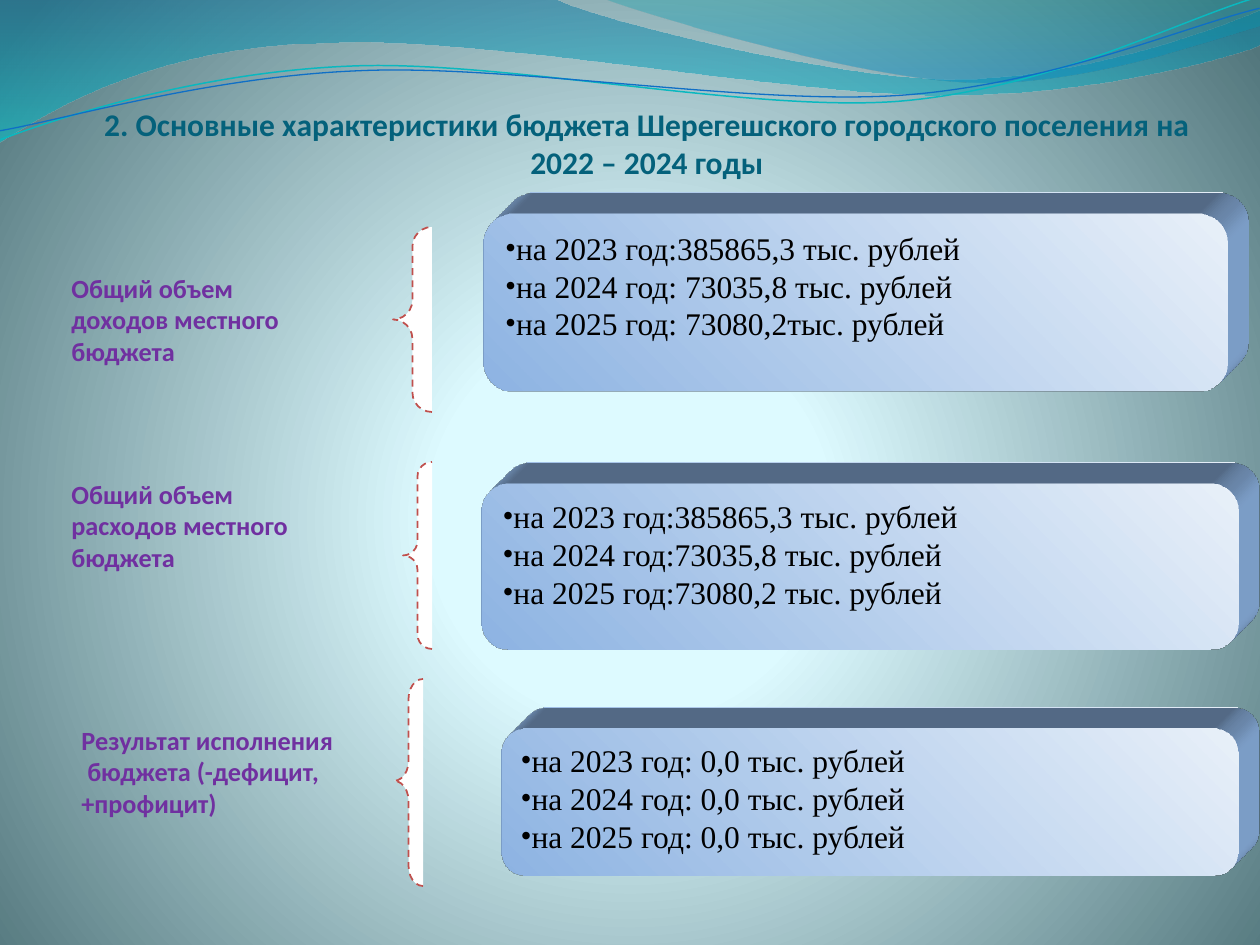
from lxml.etree import SubElement
from pptx import Presentation
from pptx.dml.color import RGBColor
from pptx.enum.dml import MSO_LINE
from pptx.enum.shapes import MSO_SHAPE
from pptx.enum.text import MSO_ANCHOR, MSO_AUTO_SIZE, PP_ALIGN
from pptx.oxml.ns import qn
from pptx.util import Pt

PX = 914400 / 126

# Each row: label box, label lines, brace box, brace curl and tip, block box, yearly figures
ROWS = [
    ((59, 266, 315, 108), ["Общий объем", "доходов местного бюджета"],
     (393, 227, 39, 185), (0.496, 0.5), (484, 214, 744, 178),
     ["на 2023 год:385865,3 тыс. рублей", "на 2024 год: 73035,8 тыс. рублей",
      "на 2025 год: 73080,2тыс. рублей"]),
    ((59, 472, 315, 146), ["Общий объем", "расходов местного бюджета"],
     (403, 462, 29, 187), (0.496, 0.5), (482, 483, 757, 167),
     ["на 2023 год:385865,3 тыс. рублей", "на 2024 год:73035,8 тыс. рублей",
      "на 2025 год:73080,2 тыс. рублей"]),
    ((69, 718, 315, 108), ["Результат исполнения", " бюджета (-дефицит, +профицит)"],
     (394, 679, 29, 207), (0.682, 0.492), (501, 728, 738, 148),
     ["на 2023 год: 0,0 тыс. рублей", "на 2024 год: 0,0 тыс. рублей",
      "на 2025 год: 0,0 тыс. рублей"]),
]

# Outlines are a start point, then steps: one point is straight, three are a Bézier curve
WAVES = [
    ((0, 0), [[(554, -1)], [(600, 21), (837, 79), (955, 79)],
              [(1075, 79), (1207, 33), (1260, 11)], [(1261, 45)],
              [(1239, 55), (1096, 96), (940, 95)], [(784, 95), (481, 35), (324, 43)],
              [(163, 45), (58, 105), (-1, 142)]],
     [(0, "0074A1", 45), (100, "00C6CF", 55)]),
    ((604, -1), [[(641, 14), (859, 78), (969, 82)],
                 [(1079, 87), (1211, 40), (1260, 26)], [(1260, 0)]],
     [(0, "00A1A9", 30), (80, "008BBF", 45)]),
]
WAVE_LINES = [
    ((-2, 110), [[(59, 90), (200, 52), (350, 53)], [(499, 53), (745, 118), (896, 114)],
                 [(1049, 109), (1184, 45), (1260, 27)]], "0AB8BF", 0.85),
    ((-2, 101), [[(57, 94), (207, 57), (358, 58)], [(509, 58), (751, 112), (902, 108)],
                 [(1052, 104), (1188, 52), (1262, 38)]], "0F6FC6", 0.75),
]
LINE_TILT = -2.7


def px(*lengths):
    return [round(length * PX) for length in lengths]


def color(hex_string):
    return RGBColor.from_string(hex_string)


def set_gradient(owner, element, stops, angle=None):
    """Fill the owner of element with stops of (percent, colour, opacity percent)."""
    owner.fill.solid()
    solid = element.find(".//" + qn("a:solidFill"))
    gradient = solid.makeelement(qn("a:gradFill"), {"rotWithShape": "1"})
    stop_list = SubElement(gradient, qn("a:gsLst"))
    for position, hex_string, opacity in stops:
        stop = SubElement(stop_list, qn("a:gs"), pos=str(position * 1000))
        tint = SubElement(stop, qn("a:srgbClr"), val=hex_string)
        if opacity < 100:
            SubElement(tint, qn("a:alpha"), val=str(opacity * 1000))
    if angle is None:
        circle = SubElement(gradient, qn("a:path"))
        circle.set("path", "circle")
        SubElement(circle, qn("a:fillToRect"), l="10000", t="110000", r="10000", b="100000")
    else:
        SubElement(gradient, qn("a:lin"), ang=str(angle * 60000), scaled="0")
    solid.getparent().replace(solid, gradient)


def add_outline(slide, start, steps, close):
    builder = slide.shapes.build_freeform(*px(*start))
    builder.add_line_segments([px(*point) for step in steps for point in step], close=close)
    outline = builder.convert_to_shape()
    outline.shadow.inherit = False
    # Merge the three straight segments of each curve into one Bézier segment
    segments = iter(outline.element.findall(".//" + qn("a:lnTo")))
    for step in steps:
        parts = [next(segments) for _ in step]
        if len(parts) == 3:
            curve = parts[0].makeelement(qn("a:cubicBezTo"), {})
            parts[0].addprevious(curve)
            for part in parts:
                curve.append(part[0])
                part.getparent().remove(part)
    return outline


def add_backdrop(slide):
    set_gradient(slide.background, slide.element,
                 [(0, "DEFBFF", 100), (25, "DDFAFF", 100), (100, "52767C", 100)])
    for start, steps, stops in WAVES:
        wave = add_outline(slide, start, steps, close=True)
        set_gradient(wave, wave.element, stops, 90)
        wave.line.fill.background()
    for start, steps, hex_string, width in WAVE_LINES:
        wave_line = add_outline(slide, start, steps, close=False)
        wave_line.rotation = LINE_TILT
        wave_line.fill.background()
        wave_line.line.color.rgb = color(hex_string)
        wave_line.line.width = Pt(width)


def write_lines(frame, lines, font_name, size, hex_string, bold=False, bullet=None):
    frame.text = "\n".join(lines)
    for paragraph in frame.paragraphs:
        paragraph.alignment = PP_ALIGN.LEFT
        font = paragraph.font
        font.name, font.size, font.bold = font_name, Pt(size), bold
        font.color.rgb = color(hex_string)
        if bullet:
            # The bullet has to stand before the default run properties
            properties = paragraph._p.get_or_add_pPr()
            SubElement(properties, qn("a:buFont"), typeface=font_name)
            SubElement(properties, qn("a:buChar"), char=bullet)
            properties.append(properties.find(qn("a:defRPr")))


def place_title(slide, box):
    title = slide.shapes.title
    title.left, title.top, title.width, title.height = px(*box)
    frame = title.text_frame
    frame.word_wrap = True
    frame.vertical_anchor = MSO_ANCHOR.BOTTOM
    frame.margin_left = frame.margin_right = 0
    frame.margin_bottom = px(37)[0]
    write_lines(frame, ["2. Основные характеристики бюджета Шерегешского городского "
                        "поселения на 2022 – 2024 годы"], "Calibri", 18, "04617B", bold=True)
    frame.paragraphs[0].alignment = PP_ALIGN.CENTER


def add_preset(slide, preset, box, adjustments):
    preset_shape = slide.shapes.add_shape(preset, *px(*box))
    preset_shape.shadow.inherit = False
    for i, value in enumerate(adjustments):
        preset_shape.adjustments[i] = value
    return preset_shape


def extrude(solid_shape, hex_string):
    """Give the shape depth towards the upper right."""
    properties = solid_shape.element.spPr
    scene = SubElement(properties, qn("a:scene3d"))
    SubElement(scene, qn("a:camera"), prst="legacyObliqueTopRight")
    SubElement(scene, qn("a:lightRig"), rig="legacyFlat3", dir="b")
    body = SubElement(properties, qn("a:sp3d"), extrusionH="430200",
                      prstMaterial="legacyMatte")
    for bevel in ("a:bevelT", "a:bevelB"):
        SubElement(body, qn(bevel), w="13500", h="13500", prst="angle")
    side = SubElement(body, qn("a:extrusionClr"))
    SubElement(side, qn("a:srgbClr"), val=hex_string)


def add_block(slide, box, figures):
    block = add_preset(slide, MSO_SHAPE.ROUNDED_RECTANGLE, box, [0.167])
    set_gradient(block, block.element, [(0, "8DB3E2", 100), (100, "E8F0F9", 100)], 315)
    block.line.fill.background()
    extrude(block, "8DB3E2")
    block.text_frame.vertical_anchor = MSO_ANCHOR.TOP
    write_lines(block.text_frame, figures, "Times New Roman", 18, "000000", bullet="•")


def add_row(slide, label_box, label_lines, brace_box, brace_curve, block_box, figures):
    label = slide.shapes.add_textbox(*px(*label_box))
    label.text_frame.word_wrap = True
    label.text_frame.auto_size = MSO_AUTO_SIZE.SHAPE_TO_FIT_TEXT
    write_lines(label.text_frame, label_lines, "Calibri", 15, "7030A0", bold=True)

    brace = add_preset(slide, MSO_SHAPE.LEFT_BRACE, brace_box, brace_curve)
    brace.fill.solid()
    brace.fill.fore_color.rgb = color("FFFFFF")
    brace.line.color.rgb = color("C0504D")
    brace.line.width = Pt(1)
    brace.line.dash_style = MSO_LINE.DASH

    add_block(slide, block_box, figures)


def main():
    deck = Presentation()
    deck.slide_width, deck.slide_height = px(1260, 945)
    slide = deck.slides.add_slide(deck.slide_layouts[5])
    add_backdrop(slide)
    place_title(slide, (78, 98, 1138, 120))
    for row in ROWS:
        add_row(slide, *row)
    deck.save("out.pptx")


if __name__ == "__main__":
    main()
